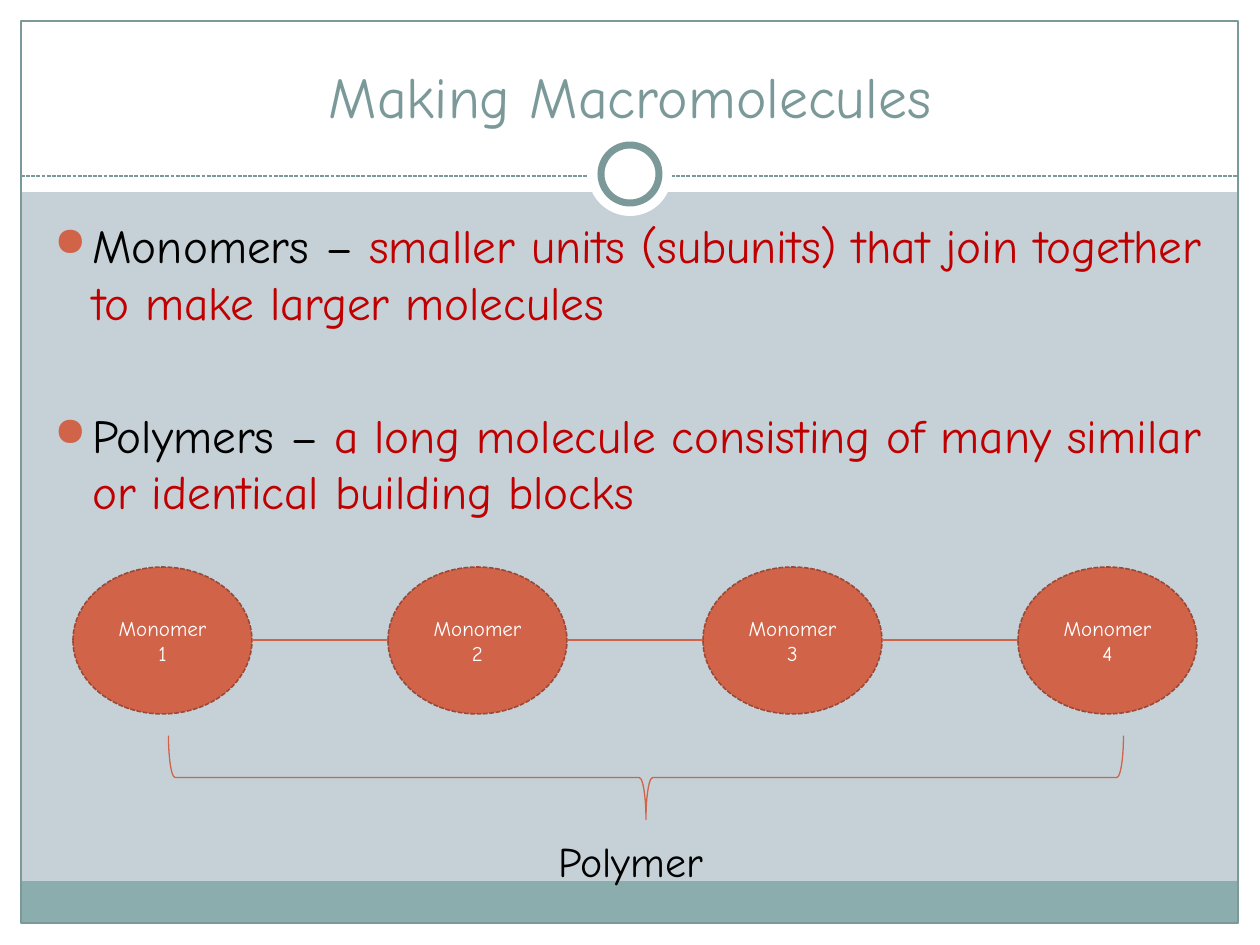
"""Builds a slide on how monomers join into a polymer."""
import pptx
import pptx.util
import pptx.dml.color
import pptx.enum.dml
import pptx.enum.shapes
import pptx.enum.text
import pptx.oxml
import pptx.oxml.ns

SCALE = 914400 / 126
FONT = "Comic Neue"
HUES = {"back": "C5D1D7", "white": "FFFFFF", "band": "8CADAE", "teal": "7C999A",
        "black": "000000", "red": "C00000", "rust": "D16349", "edge": "9B4936"}
KINDS = pptx.enum.shapes.MSO_SHAPE
ALIGN = pptx.enum.text.PP_ALIGN
ANCHOR = pptx.enum.text.MSO_ANCHOR
DASH = pptx.enum.dml.MSO_LINE.SQUARE_DOT


def emu(px):
    return round(px * SCALE)


def rgb(hue):
    return pptx.dml.color.RGBColor.from_string(HUES[hue])


def set_line(line, hue, width=0.75, dash=None):
    line.color.rgb = rgb(hue)
    line.width = pptx.util.Pt(width)
    if dash:
        line.dash_style = dash


def add_shape(slide, kind, box, fill=None, line=None, width=0.75, dash=None):
    shape = slide.shapes.add_shape(kind, *map(emu, box))
    shape.shadow.inherit = False
    if fill:
        shape.fill.solid()
        shape.fill.fore_color.rgb = rgb(fill)
    else:
        shape.fill.background()
    if line:
        set_line(shape.line, line, width, dash)
    else:
        shape.line.fill.background()
    return shape


def add_line(slide, left, right, y, hue, dash=None):
    link = slide.shapes.add_connector(
        pptx.enum.shapes.MSO_CONNECTOR.STRAIGHT, *map(emu, (left, y, right, y)))
    set_line(link.line, hue, dash=dash)
    props = link._element.spPr
    props.append(pptx.oxml.parse_xml(
        f'<a:effectLst {pptx.oxml.ns.nsdecls("a")}/>'))


def style(run, size, hue):
    run.font.name = FONT
    run.font.size = pptx.util.Pt(size)
    run.font.color.rgb = rgb(hue)


def set_text(shape, text, size, hue, align, anchor):
    frame = shape.text_frame
    frame.text = text
    frame.word_wrap = True
    frame.vertical_anchor = anchor
    para = frame.paragraphs[0]
    para.alignment = align
    style(para.runs[0], size, hue)


def add_text(slide, box, *args):
    shape = slide.shapes.add_textbox(*map(emu, box))
    set_text(shape, *args)


def set_bullet(para):
    props = para._p.get_or_add_pPr()
    props.set("marL", str(emu(38)))
    props.set("indent", str(emu(-38)))
    space = pptx.oxml.ns.nsdecls("a")
    for part in (f'<a:buClr {space}><a:srgbClr val="{HUES["rust"]}"/></a:buClr>',
                 f'<a:buSzPct {space} val="85000"/>',
                 f'<a:buChar {space} char="●"/>'):
        props.append(pptx.oxml.parse_xml(part))


def add_terms(slide, box, terms):
    frame = slide.shapes.add_textbox(*map(emu, box)).text_frame
    frame.word_wrap = True
    for i, (term, sense, gap) in enumerate(terms):
        para = frame.add_paragraph() if i else frame.paragraphs[0]
        para.space_before = pptx.util.Pt(gap)
        set_bullet(para)
        for text, hue in ((term, "black"), (sense, "red")):
            run = para.add_run()
            run.text = text
            style(run, 27, hue)


def add_frame(slide):
    slide.background.fill.solid()
    slide.background.fill.fore_color.rgb = rgb("back")
    for box in ((0, 924, 1260, 21), (0, 0, 1260, 192),
                (0, 0, 21, 945), (1239, 0, 21, 945)):
        add_shape(slide, KINDS.RECTANGLE, box, "white")
    add_shape(slide, KINDS.RECTANGLE, (21, 881, 1217, 43), "band")
    add_shape(slide, KINDS.RECTANGLE, (21, 21, 1217, 902), line="teal")
    add_line(slide, 21, 1239, 176, "teal", DASH)
    add_shape(slide, KINDS.OVAL, (588, 132, 84, 84), "white")
    add_shape(slide, KINDS.OVAL, (601, 145, 58, 58), "white", "teal", 4)


def add_chain(slide, count):
    left, top, wide, high, step = 73, 567, 179, 147, 315
    for i in range(count):
        x = left + i * step
        bead = add_shape(slide, KINDS.OVAL, (x, top, wide, high),
                         "rust", "edge", 0.9, DASH)
        set_text(bead, f"Monomer {i + 1}", 12, "white", ALIGN.CENTER, ANCHOR.MIDDLE)
        if i:
            add_line(slide, x - step + wide, x, 640, "rust")


def add_brace(slide):
    brace = add_shape(slide, KINDS.LEFT_BRACE, (604, 300, 84, 955), line="rust")
    brace.rotation = 270
    brace.adjustments[0] = 0.08
    brace.adjustments[1] = 0.5


def main():
    deck = pptx.Presentation()
    deck.slide_width, deck.slide_height = emu(1260), emu(945)
    slide = deck.slides.add_slide(deck.slide_layouts[6])
    add_frame(slide)
    add_text(slide, (42, 32, 1176, 104), "Making Macromolecules", 33, "teal",
             ALIGN.CENTER, ANCHOR.BOTTOM)
    add_terms(slide, (42, 210, 1172, 630), (
        ("Monomers – ", "smaller units (subunits) that join together "
         "to make larger molecules", 5.4),
        ("Polymers – ", "a long molecule consisting of many similar "
         "or identical building blocks", 43.5)))
    add_chain(slide, 4)
    add_brace(slide)
    add_text(slide, (546, 829, 199, 63), "Polymer", 24, "black",
             ALIGN.LEFT, ANCHOR.TOP)
    deck.save("out.pptx")


if __name__ == "__main__":
    main()
